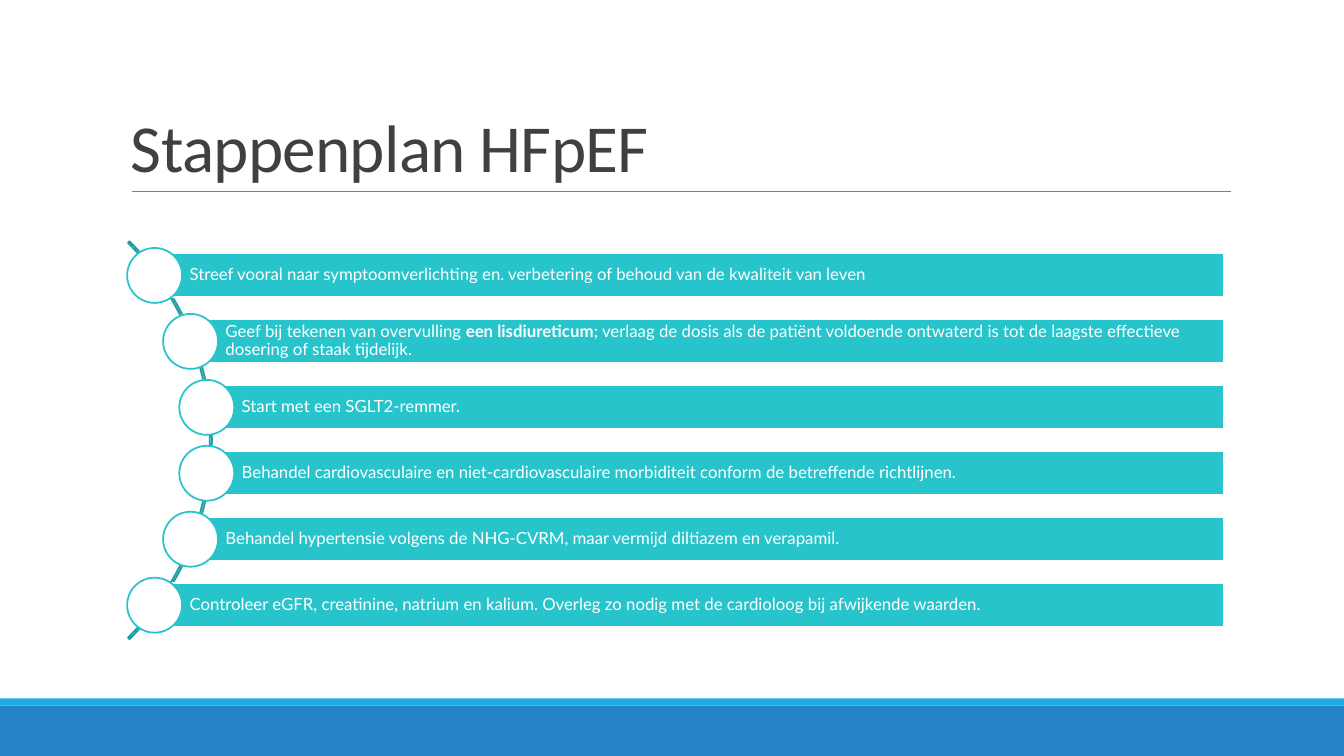
import dataclasses
import math

import pptx
import pptx.dml.color
import pptx.enum.shapes
import pptx.enum.text
import pptx.oxml.ns
import pptx.util
from lxml import etree

Cm = pptx.util.Cm
Pt = pptx.util.Pt
SHAPES = pptx.enum.shapes.MSO_SHAPE
ANCHORS = pptx.enum.text.MSO_ANCHOR


@dataclasses.dataclass(frozen=True)
class Theme:
    """Colours, fonts and type sizes of the slide."""
    white: str = "FFFFFF"
    title_ink: str = "404040"
    rule: str = "808080"
    footer: str = "2683C6"
    footer_edge: str = "1CADE4"
    step: str = "28C4CC"
    arc: str = "209DA3"
    title_font: str = "Calibri"
    step_font: str = "Lato"
    title_size: float = 48
    step_size: float = 12
    outline: float = 1.25
    hairline: float = 0.5


THEME = Theme()

STEPS = [
    [("Streef vooral naar symptoomverlichting en. verbetering of behoud van de kwaliteit van leven", False)],
    [("Geef bij tekenen van overvulling ", False),
     ("een lisdiureticum", True),
     ("; verlaag de dosis als de patiënt voldoende ontwaterd is tot de laagste effectieve "
      "dosering of staak tijdelijk.", False)],
    [("Start met een SGLT2-remmer.", False)],
    [("Behandel cardiovasculaire en niet-cardiovasculaire morbiditeit conform de betreffende richtlijnen.", False)],
    [("Behandel hypertensie volgens de NHG-CVRM, maar vermijd diltiazem en verapamil.", False)],
    [("Controleer eGFR, creatinine, natrium en kalium. Overleg zo nodig met de cardioloog "
      "bij afwijkende waarden.", False)],
]


def apply_format(target, values):
    """Set each named attribute of the target."""
    for name, value in values.items():
        setattr(target, name, value)


def rgb(code):
    """Turn a hex code into a colour."""
    return pptx.dml.color.RGBColor.from_string(code)


def add_figure(slide, preset, box, fill=None, line=None):
    """Add a preset shape with the given fill and outline in a box in centimetres."""
    figure = slide.shapes.add_shape(preset, *map(Cm, box))
    figure.shadow.inherit = False
    if fill:
        figure.fill.solid()
        figure.fill.fore_color.rgb = rgb(fill)
    else:
        figure.fill.background()
    if line:
        figure.line.color.rgb = rgb(line)
        figure.line.width = Pt(THEME.outline)
    else:
        figure.line.fill.background()
    return figure


def write_text(holder, pieces, frame_format, spacing, font_format, ink):
    """Write one left-aligned paragraph of (text, bold) pieces."""
    apply_format(holder.text_frame, {"word_wrap": True, **frame_format})
    paragraph = holder.text_frame.paragraphs[0]
    apply_format(paragraph, {"alignment": pptx.enum.text.PP_ALIGN.LEFT, "line_spacing": spacing})
    for text, bold in pieces:
        run = paragraph.add_run()
        run.text = text
        apply_format(run.font, {**font_format, "bold": bold})
        run.font.color.rgb = rgb(ink)
    return paragraph


def add_footer(slide, left, top, width, height):
    """Place the footer band with its lighter upper edge."""
    edge = 0.18
    add_figure(slide, SHAPES.RECTANGLE, (left, top + edge, width, height - edge), THEME.footer)
    add_figure(slide, SHAPES.RECTANGLE, (left, top, width, edge), THEME.footer_edge)


def add_heading(slide, left, top, width, height):
    """Place the title at the bottom of its box, with a rule beneath it."""
    title = slide.shapes.add_textbox(*map(Cm, (left, top, width, height)))
    paragraph = write_text(
        title, [("Stappenplan HFpEF", False)], {"vertical_anchor": ANCHORS.BOTTOM}, 0.85,
        {"name": THEME.title_font, "size": Pt(THEME.title_size)}, THEME.title_ink)
    paragraph.runs[0].font._element.set("spc", "-50")
    rule_left, rule_y = left + 0.28, top + height
    rule = slide.shapes.add_connector(
        pptx.enum.shapes.MSO_CONNECTOR.STRAIGHT,
        *map(Cm, (rule_left, rule_y, rule_left + 27.68, rule_y)))
    rule.line.color.rgb = rgb(THEME.rule)
    rule.line.width = Pt(THEME.hairline)
    etree.SubElement(rule._element.spPr, pptx.oxml.ns.qn("a:effectLst"))


def add_steps(slide, left, top, width, height):
    """Place the steps along an arc whose centre lies left of the box."""
    pitch = height / len(STEPS)
    bar_height = pitch * 2 / 3
    circle = bar_height * 1.25
    arc_radius, track_radius = 7.09, 7.01
    centre_x, centre_y = left - 4.95, top + height / 2

    arc = add_figure(
        slide, SHAPES.BLOCK_ARC,
        (centre_x - arc_radius, centre_y - arc_radius, 2 * arc_radius, 2 * arc_radius),
        line=THEME.arc)
    for index, value in enumerate((189, 27, 0.0039)):
        arc.adjustments[index] = value

    margins = {"margin_left": Cm(0.88), "margin_right": Cm(0.08),
               "margin_top": Cm(0.08), "margin_bottom": Cm(0.08)}
    for index, pieces in enumerate(STEPS):
        y = top + (index + 0.5) * pitch
        x = centre_x + math.sqrt(track_radius ** 2 - (y - centre_y) ** 2)
        bar = add_figure(
            slide, SHAPES.RECTANGLE, (x, y - bar_height / 2, left + width - x, bar_height),
            THEME.step, THEME.white)
        write_text(bar, pieces, {"vertical_anchor": ANCHORS.MIDDLE, **margins}, 0.9,
                   {"name": THEME.step_font, "size": Pt(THEME.step_size)}, THEME.white)
        add_figure(slide, SHAPES.OVAL, (x - circle / 2, y - circle / 2, circle, circle),
                   THEME.white, THEME.step)


def main():
    """Build the slide and save it."""
    deck = pptx.Presentation()
    apply_format(deck, {"slide_width": Cm(33.87), "slide_height": Cm(19.05)})
    slide = deck.slides.add_slide(deck.slide_layouts[6])
    add_footer(slide, 0, 17.6, 33.87, 1.45)
    add_heading(slide, 3.05, 0.79, 27.94, 4.03)
    add_steps(slide, 3.2, 6.11, 27.64, 9.97)
    deck.save("out.pptx")


if __name__ == "__main__":
    main()
